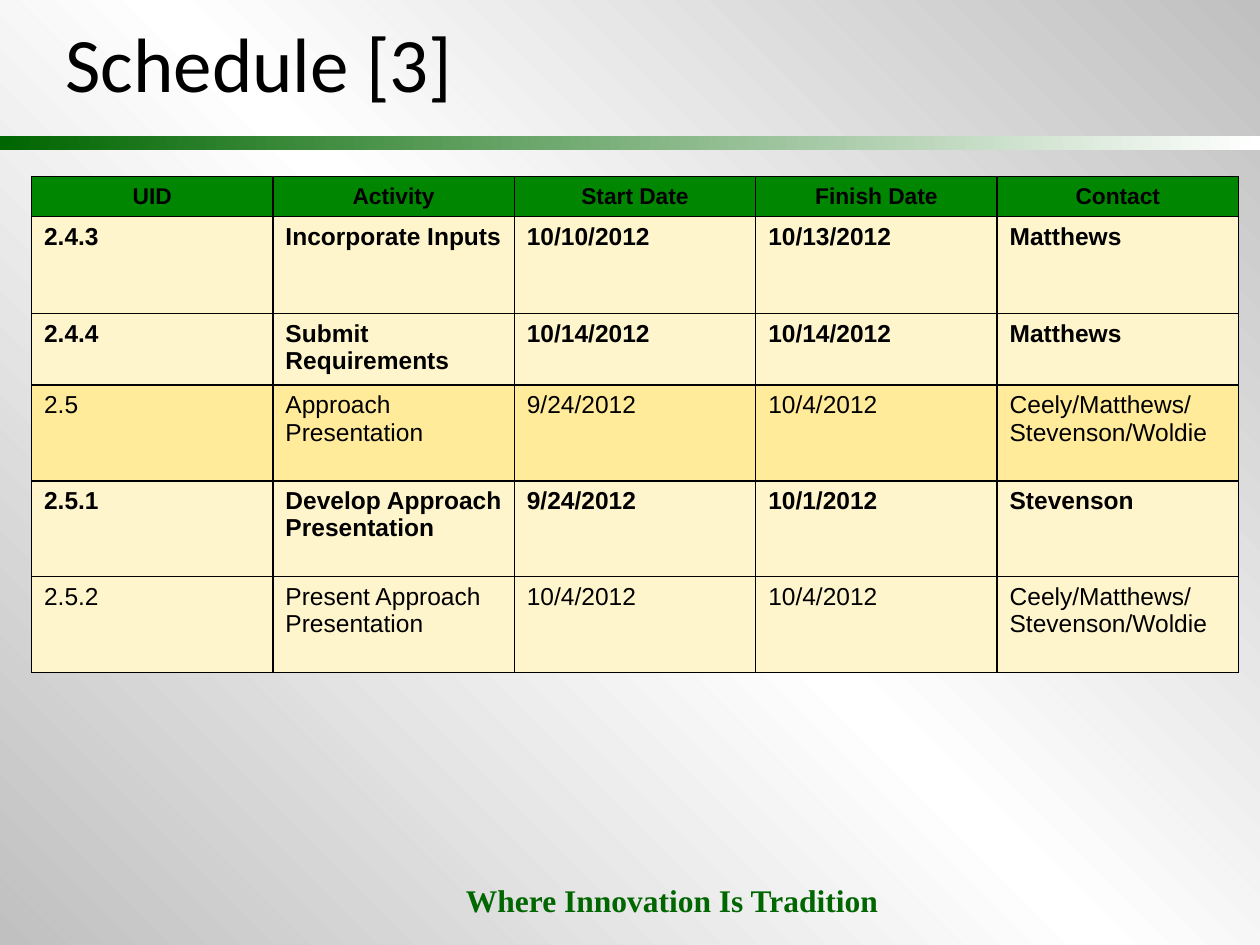
from copy import deepcopy
from dataclasses import dataclass

from pptx import Presentation
from pptx.dml.color import RGBColor
from pptx.enum.shapes import MSO_SHAPE
from pptx.enum.text import MSO_ANCHOR, MSO_AUTO_SIZE, PP_ALIGN
from pptx.oxml import parse_xml
from pptx.oxml.ns import nsdecls, qn
from pptx.util import Inches, Pt


@dataclass(frozen=True)
class Theme:
    """Colours, fonts and type sizes of the slide."""
    black: str = "000000"
    white: str = "FFFFFF"
    silver: str = "C0C0C0"
    green: str = "006600"
    header_fill: str = "008600"
    row_fill: str = "FFF5CC"
    phase_fill: str = "FFEB99"
    title_font: str = "Calibri"
    table_font: str = "Arial"
    motto_font: str = "Times New Roman"
    title_size: int = 44
    motto_size: int = 18
    header_size: int = 13
    row_size: int = 14


THEME = Theme()
HEADINGS = ("UID", "Activity", "Start Date", "Finish Date", "Contact")
TEAM = "Ceely/Matthews/Stevenson/Woldie"
ACTIVITIES = (
    (0.77, True, THEME.row_fill,
     ("2.4.3", "Incorporate Inputs", "10/10/2012", "10/13/2012", "Matthews")),
    (0.54, True, THEME.row_fill,
     ("2.4.4", "Submit Requirements", "10/14/2012", "10/14/2012", "Matthews")),
    (0.76, False, THEME.phase_fill,
     ("2.5", "Approach Presentation", "9/24/2012", "10/4/2012", TEAM)),
    (0.76, True, THEME.row_fill,
     ("2.5.1", "Develop Approach Presentation", "9/24/2012", "10/1/2012", "Stevenson")),
    (0.76, False, THEME.row_fill,
     ("2.5.2", "Present Approach Presentation", "10/4/2012", "10/4/2012", TEAM)),
)


def style_text(frame, font_name, size, color, bold=False, align=PP_ALIGN.LEFT):
    """Format every run of a text frame alike."""
    for paragraph in frame.paragraphs:
        paragraph.alignment = align
        for run in paragraph.runs:
            run.font.name = font_name
            run.font.size = Pt(size)
            run.font.bold = bold
            run.font.color.rgb = RGBColor.from_string(color)


def paint_gradient(fill, element, colors, angle):
    """Fill with evenly spaced gradient colours."""
    fill.gradient()
    fill.gradient_angle = angle
    stop_list = next(element.iter(qn("a:gsLst")))
    for _ in colors[2:]:
        stop_list.insert(1, deepcopy(stop_list[0]))
    for index, (stop, color) in enumerate(zip(fill.gradient_stops, colors)):
        stop.position = index / (len(colors) - 1)
        stop.color.rgb = RGBColor.from_string(color)


def add_title(slide, box):
    """Place the slide title in its placeholder."""
    title = slide.shapes.title
    title.left, title.top, title.width, title.height = box
    frame = title.text_frame
    frame.text = "Schedule [3]"
    frame.auto_size = MSO_AUTO_SIZE.NONE
    frame.vertical_anchor = MSO_ANCHOR.MIDDLE
    frame.margin_top = frame.margin_bottom = Inches(0.1)
    style_text(frame, THEME.title_font, THEME.title_size, THEME.black)


def add_divider(slide, box):
    """Draw the fading green band under the title."""
    divider = slide.shapes.add_shape(MSO_SHAPE.RECTANGLE, *box)
    divider.shadow.inherit = False
    divider.line.fill.background()
    paint_gradient(divider.fill, divider.element, (THEME.green, THEME.white), 0)


def add_motto(slide, box):
    """Write the motto at the foot of the slide."""
    frame = slide.shapes.add_textbox(*box).text_frame
    frame.word_wrap = True
    frame.auto_size = MSO_AUTO_SIZE.SHAPE_TO_FIT_TEXT
    frame.text = "Where Innovation Is Tradition"
    style_text(frame, THEME.motto_font, THEME.motto_size, THEME.green, bold=True)


def outline_cell(cell):
    """Give a cell thin black borders on all four sides."""
    properties = cell._tc.get_or_add_tcPr()
    for index, side in enumerate(("lnL", "lnR", "lnT", "lnB")):
        properties.insert(index, parse_xml(
            f'<a:{side} {nsdecls("a")} w="{Pt(1)}"><a:solidFill>'
            f'<a:srgbClr val="{THEME.black}"/></a:solidFill></a:{side}>'))


def fill_row(table, row_index, labels, fill_color, size, bold, align, anchor):
    """Write and format one table row."""
    for cell, label in zip(table.rows[row_index].cells, labels):
        cell.text = label
        cell.vertical_anchor = anchor
        cell.fill.solid()
        cell.fill.fore_color.rgb = RGBColor.from_string(fill_color)
        style_text(cell.text_frame, THEME.table_font, size, THEME.black, bold, align)
        outline_cell(cell)


def add_schedule(slide, box):
    """Build the schedule table with equal columns."""
    table = slide.shapes.add_table(len(ACTIVITIES) + 1, len(HEADINGS), *box).table
    table.horz_banding = False
    for column in table.columns:
        column.width = box[2] // len(HEADINGS)
    table.rows[0].height = Inches(0.32)
    fill_row(table, 0, HEADINGS, THEME.header_fill, THEME.header_size, True,
             PP_ALIGN.CENTER, MSO_ANCHOR.MIDDLE)
    for index, (height, bold, fill_color, labels) in enumerate(ACTIVITIES, start=1):
        table.rows[index].height = Inches(height)
        fill_row(table, index, labels, fill_color, THEME.row_size, bold,
                 PP_ALIGN.LEFT, MSO_ANCHOR.TOP)


def inch_box(*lengths):
    """Turn left, top, width and height into lengths."""
    return tuple(Inches(length) for length in lengths)


def main():
    """Build and save the schedule slide."""
    deck = Presentation()
    deck.slide_width, deck.slide_height = Inches(10), Inches(7.5)
    slide = deck.slides.add_slide(deck.slide_layouts[5])
    paint_gradient(slide.background.fill, slide.element,
                   (THEME.silver, THEME.white, THEME.silver), 45)
    add_divider(slide, inch_box(0, 1.08, 10, 0.11))
    add_motto(slide, inch_box(3.6, 6.94, 3.5, 0.4))
    add_title(slide, inch_box(0.42, -0.08, 8.92, 1.14))
    add_schedule(slide, inch_box(0.25, 1.4, 9.58, 3.93))
    deck.save("out.pptx")


if __name__ == "__main__":
    main()
